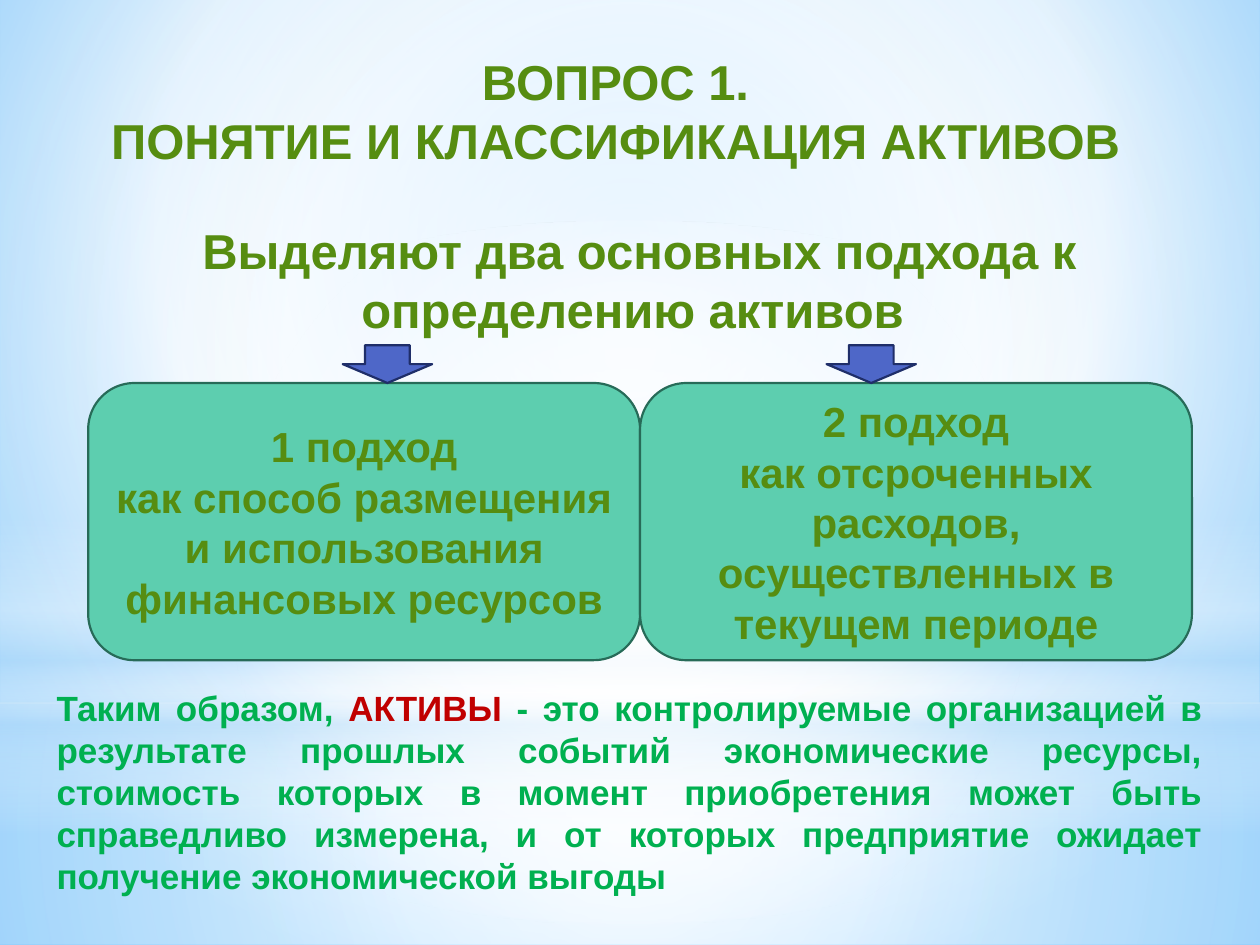
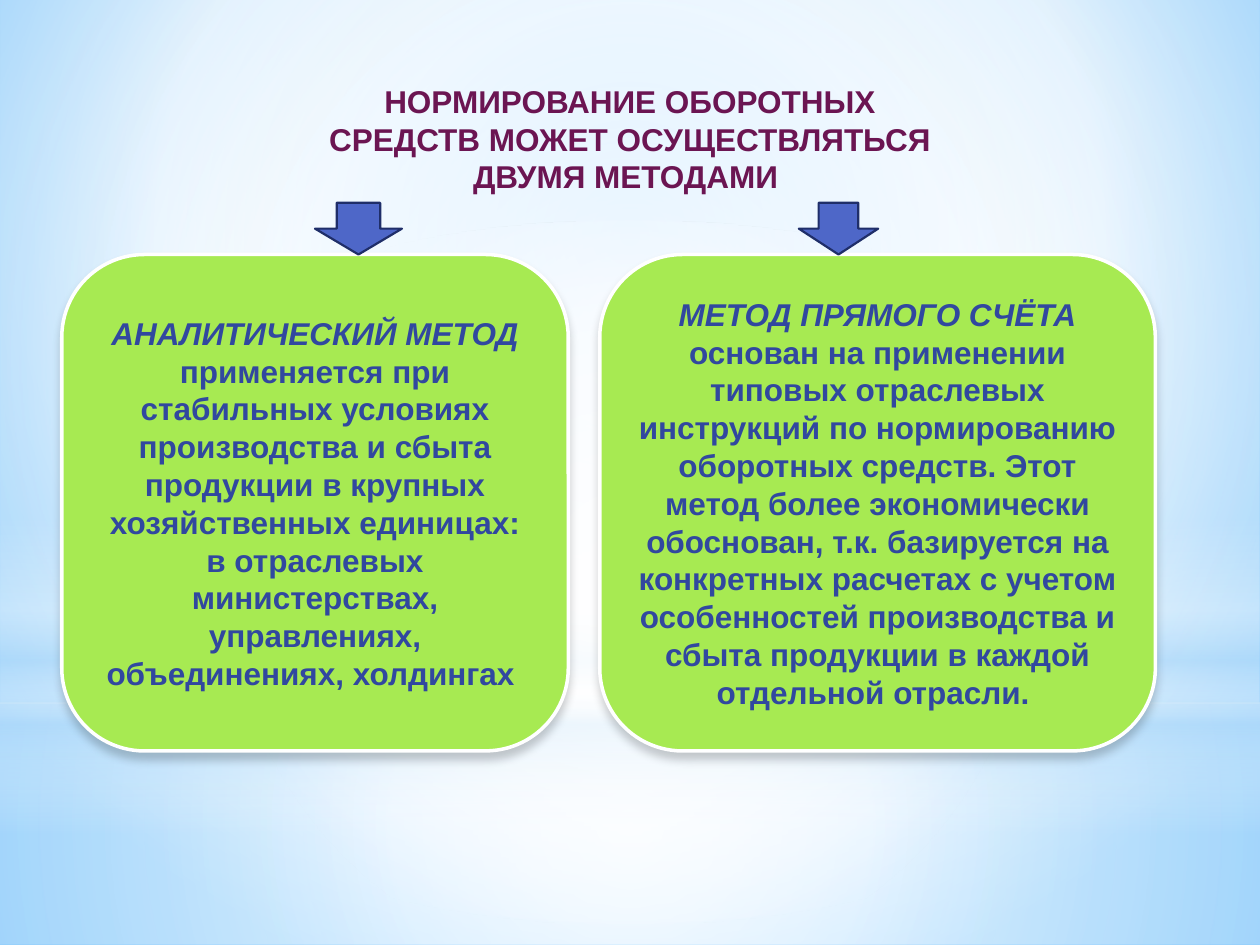
from pptx import Presentation
from pptx.dml.color import RGBColor as RGB
from pptx.enum.shapes import MSO_SHAPE as SHAPE
from pptx.enum.text import MSO_ANCHOR as ANCHOR, MSO_AUTO_SIZE as AUTO, PP_ALIGN as ALIGN
from pptx.oxml import parse_xml
from pptx.oxml.ns import nsdecls, qn
from pptx.util import Inches, Pt

HUES = {
    "sky": "9ED5FF", "deep": "5BB9FF", "white": "FFFFFF", "mist": "B4DCFA",
    "olive": "568D11", "plum": "6B1552", "navy": "31489F", "green": "00B050", "red": "C00000",
    "teal": "5DCEAF", "pine": "276B58", "lime": "A7EA52",
    "blue": "4E67C8", "ink": "1F2E69", "black": "000000",
}
FONT = "Arial"
MID = (50, 50, 50, 50)
SKY = [(0, "sky", 100), (60, "white", 100), (100, "deep", 100)]
GLOWS = [
    (SHAPE.RECTANGLE, (0, 5.58, 10, 1.92),
     [(0, "white", 91), (37, "white", 76), (100, "mist", 79)], MID),
    (SHAPE.RECTANGLE, (0, 0, 10, 5.58),
     [(0, "white", 89), (48, "white", 62), (100, "mist", 79)], MID),
    (SHAPE.RECTANGLE, (0, 4.12, 10, 2.5),
     [(0, "white", 0), (29, "white", 30), (45, "mist", 40),
      (55, "white", 26), (65, "mist", 60), (100, "white", 0)], None),
    (SHAPE.OVAL, (0, 1.75, 10, 5.58),
     [(0, "white", 100), (56, "white", 0)], MID),
]

SLIDES = [
    {
        "texts": [
            ((0.67, 0.36, 8.43, 1.04), 28, ALIGN.CENTER,
             [[("ВОПРОС 1.", "olive")],
              [("ПОНЯТИЕ И КЛАССИФИКАЦИЯ АКТИВОВ", "olive")]]),
            ((1.06, 1.7, 8.03, 1.04), 28, ALIGN.CENTER,
             [[("Выделяют два основных подхода к определению активов ", "olive")]]),
            ((0.35, 5.4, 9.29, 1.78), 20, ALIGN.JUSTIFY,
             [[("Таким образом, ", "green"), ("АКТИВЫ ", "red"),
               ("- это контролируемые организацией в результате прошлых событий "
                "экономические ресурсы, стоимость которых в момент приобретения "
                "может быть справедливо измерена, и от которых предприятие ожидает "
                "получение экономической выгоды", "green")]]),
        ],
        "top": 3.04, "high": 2.2, "size": 24, "drop": 0.3,
        "fill": "teal", "edge": "pine", "width": 1.25, "shade": False,
        "cards": [
            (0.7, 4.38, [[("1 подход", "olive")],
                         [("как способ размещения и использования финансовых ресурсов",
                           "olive")]]),
            (5.08, 4.38, [[("2 подход", "olive")],
                          [("как отсроченных расходов, осуществленных в текущем периоде",
                            "olive")]]),
        ],
        "arrows": [(2.72, 0.71), (6.56, 0.71)],
    },
    {
        "texts": [
            ((2.5, 0.6, 5, 1.01), 18, ALIGN.CENTER,
             [[("НОРМИРОВАНИЕ ОБОРОТНЫХ СРЕДСТВ МОЖЕТ ОСУЩЕСТВЛЯТЬСЯ ДВУМЯ МЕТОДАМИ ",
                "plum")]]),
        ],
        "top": 2.02, "high": 3.94, "size": 18, "drop": 0.41,
        "fill": "lime", "edge": "white", "width": 2, "shade": True,
        "cards": [
            (0.49, 4.02, [[("АНАЛИТИЧЕСКИЙ МЕТОД ", "navy", True),
                           ("применяется при стабильных условиях производства и сбыта "
                            "продукции в крупных хозяйственных единицах: в отраслевых "
                            "министерствах, управлениях, объединениях, холдингах ", "navy")]]),
            (4.76, 4.41, [[("МЕТОД ПРЯМОГО СЧЁТА ", "navy", True),
                           ("основан на применении типовых отраслевых инструкций по "
                            "нормированию оборотных средств. Этот метод более экономически "
                            "обоснован, т.к. базируется на конкретных расчетах с учетом "
                            "особенностей производства и сбыта продукции в каждой отдельной "
                            "отрасли. ", "navy")]]),
        ],
        "arrows": [(2.5, 0.69), (6.34, 0.63)],
    },
]


def tint(hue):
    return RGB.from_string(HUES[hue])


def blend(holder, stops, focus):
    marks = "".join(
        f'<a:gs pos="{pos * 1000}"><a:srgbClr val="{HUES[hue]}">'
        f'<a:alpha val="{alpha * 1000}"/></a:srgbClr></a:gs>'
        for pos, hue, alpha in stops)
    if focus:
        sides = " ".join(f'{side}="{num * 1000}"' for side, num in zip("ltrb", focus))
        way = f'<a:path path="circle"><a:fillToRect {sides}/></a:path>'
    else:
        way = '<a:lin ang="5400000" scaled="0"/>'
    grad = parse_xml(f'<a:gradFill {nsdecls("a")} rotWithShape="1">'
                     f'<a:gsLst>{marks}</a:gsLst>{way}</a:gradFill>')
    holder.replace(holder.find(qn("a:solidFill")), grad)


def draw(slide, kind, box, fill, edge=None, width=0):
    shape = slide.shapes.add_shape(kind, *map(Inches, box))
    shape.shadow.inherit = False
    shape.fill.solid()
    shape.fill.fore_color.rgb = tint(fill)
    if edge:
        shape.line.color.rgb = tint(edge)
        shape.line.width = Pt(width)
    else:
        shape.line.fill.background()
    return shape


def shade(shape):
    shape.element.spPr.find(qn("a:effectLst")).append(parse_xml(
        f'<a:outerShdw {nsdecls("a")} blurRad="{Pt(5)}" dist="{Pt(4)}" dir="5400000" '
        f'rotWithShape="0"><a:srgbClr val="{HUES["black"]}"><a:alpha val="20000"/>'
        '</a:srgbClr></a:outerShdw>'))


def write(frame, paras, size, align):
    frame.word_wrap = True
    for num, parts in enumerate(paras):
        para = frame.add_paragraph() if num else frame.paragraphs[0]
        para.alignment = align
        for words, hue, *slant in parts:
            run = para.add_run()
            run.text = words
            font = run.font
            font.name, font.size, font.bold = FONT, Pt(size), True
            font.italic = bool(slant)
            font.color.rgb = tint(hue)


def dress(master, slide):
    master.background.fill.solid()
    blend(master.element.find(".//" + qn("p:bgPr")), SKY, (20, 10, 20, 60))
    for num, (kind, box, stops, focus) in enumerate(GLOWS):
        glow = draw(slide, kind, box, "white")
        blend(glow.element.spPr, stops, focus)
        glow.element.nvSpPr.cNvPr.set("id", str(100 + num))
        master.shapes.element.append(glow.element)


def build(slide, plan):
    for box, size, align, paras in plan["texts"]:
        frame = slide.shapes.add_textbox(*map(Inches, box)).text_frame
        write(frame, paras, size, align)
        frame.auto_size = AUTO.SHAPE_TO_FIT_TEXT
    top, drop = plan["top"], plan["drop"]
    for left, wide, paras in plan["cards"]:
        card = draw(slide, SHAPE.ROUNDED_RECTANGLE, (left, top, wide, plan["high"]),
                    plan["fill"], plan["edge"], plan["width"])
        if plan["shade"]:
            shade(card)
        write(card.text_frame, paras, plan["size"], ALIGN.CENTER)
        card.text_frame.vertical_anchor = ANCHOR.MIDDLE
    for left, wide in plan["arrows"]:
        draw(slide, SHAPE.DOWN_ARROW, (left, top - drop, wide, drop), "blue", "ink", 1.25)


def main():
    prs = Presentation()
    prs.slide_width, prs.slide_height = Inches(10), Inches(7.5)
    blank = prs.slide_layouts[6]
    pages = [prs.slides.add_slide(blank) for _ in SLIDES]
    dress(prs.slide_master, pages[0])
    for page, plan in zip(pages, SLIDES):
        build(page, plan)
    prs.save("out.pptx")


if __name__ == "__main__":
    main()
